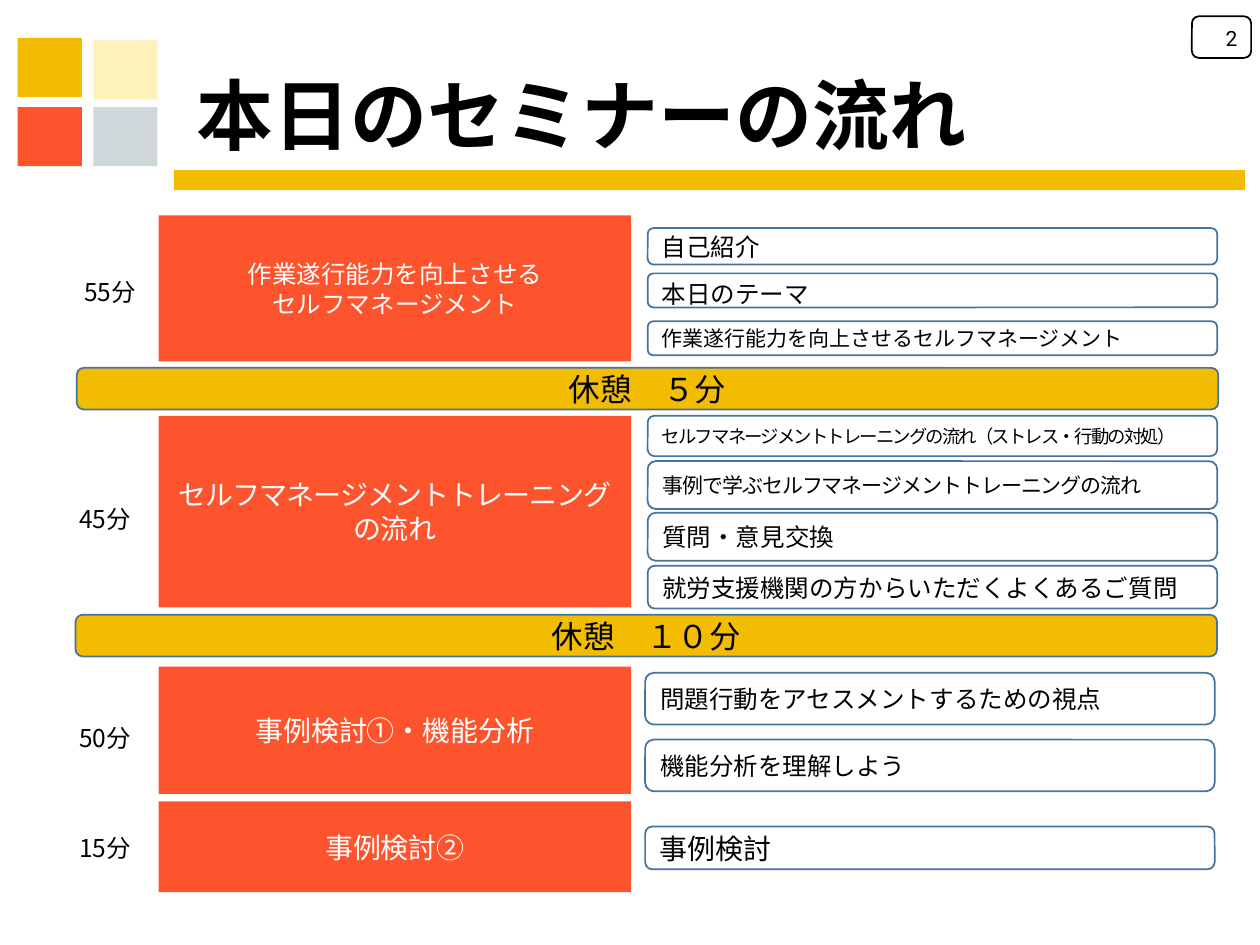
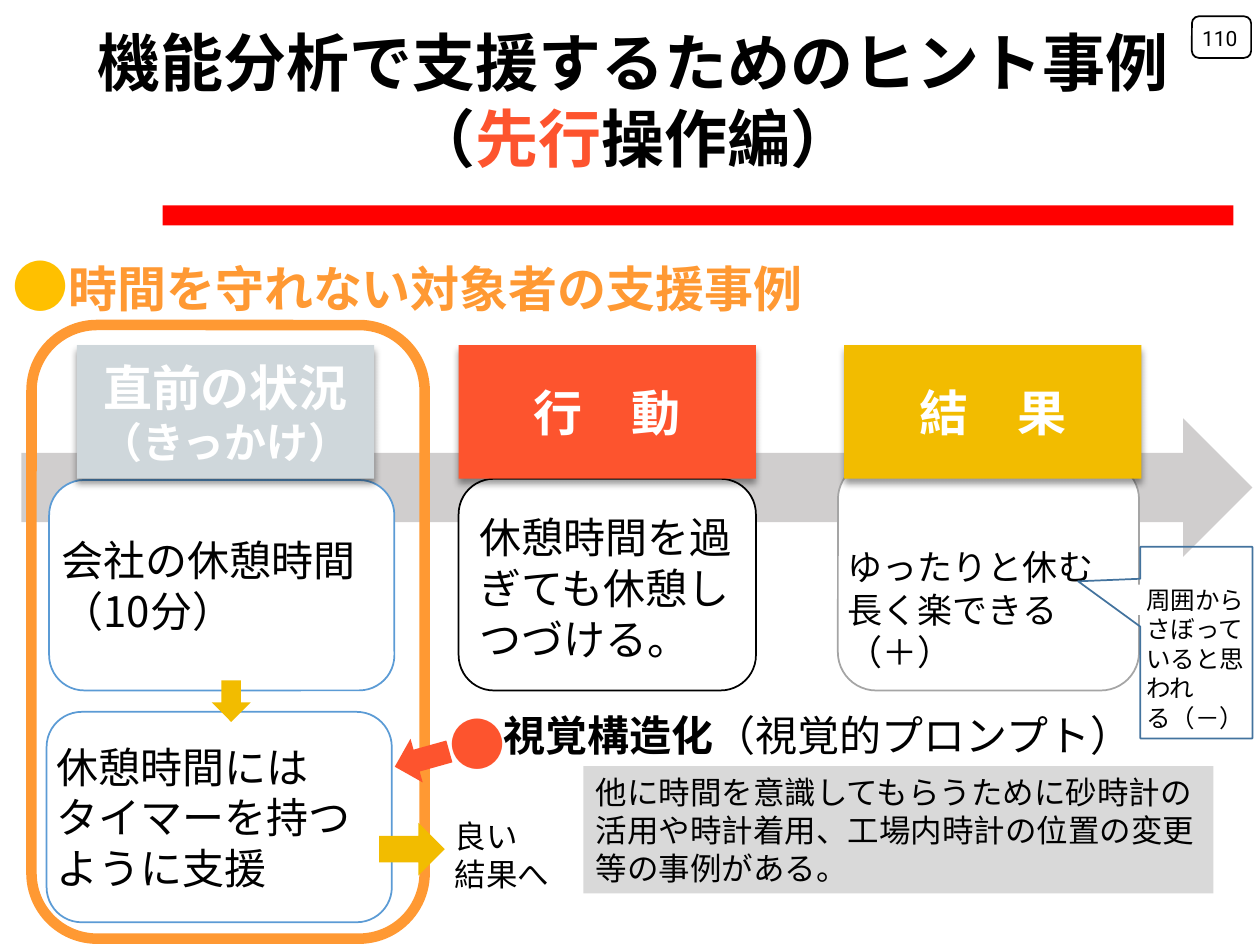
from dataclasses import dataclass
from typing import NamedTuple, Optional

from lxml import etree
from pptx import Presentation
from pptx import util as u
from pptx.dml.color import RGBColor
from pptx.enum import shapes, text
from pptx.oxml.ns import qn

PX = 9144  # EMU in one px, 100 px to the inch
Area = tuple[int, int, int, int]
Kind = shapes.MSO_SHAPE
LEFT, CENTER, RIGHT = text.PP_ALIGN.LEFT, text.PP_ALIGN.CENTER, text.PP_ALIGN.RIGHT


@dataclass(frozen=True)
class Theme:
    font: str = "Noto Sans CJK JP"
    number_font: str = "Roboto"
    leading: float = 1.21
    black: str = "000000"
    white: str = "FFFFFF"
    gold: str = "F2BC00"
    cream: str = "FFF1BA"
    coral: str = "FD542E"
    mist: str = "CFD7DB"
    red: str = "FF0000"
    orange: str = "FF9933"
    amber: str = "FFC000"
    navy: str = "43739E"
    blue: str = "5B9BD5"
    gray: str = "A5A5A5"
    arrow_gray: str = "D0CECE"
    note_gray: str = "D9D9D9"
    title: int = 44
    long_title: int = 36
    bullet: int = 32
    heading: int = 28
    body: int = 24
    result: int = 20
    label: int = 18
    session: int = 16
    topic: int = 14
    small: int = 12
    tiny: float = 10.5


T = Theme()


class Run(NamedTuple):
    words: str
    size: float
    color: str = T.black
    bold: bool = False
    spacing: float = 0
    font: str = T.font


Paragraphs = list[list[Run]]


class Topic(NamedTuple):
    top: int
    height: int
    runs: list[Run]
    left: int = 514


class Session(NamedTuple):
    minutes: str
    minutes_at: tuple[int, int]
    top: int
    height: int
    name: Paragraphs
    topics: list[Topic]


class Rest(NamedTuple):
    left: int
    top: int
    words: str


class Stage(NamedTuple):
    """One step of the antecedent, behaviour, consequence chain."""
    left: int
    color: str
    name: Paragraphs
    frame: Area
    frame_line: str


def lines(*words: str, size: float, color: str = T.black) -> Paragraphs:
    return [[Run(line, size, color)] for line in words]


def fill_text(frame, paragraphs: Paragraphs, align, middle: bool, wrap: bool) -> None:
    frame.word_wrap = wrap
    frame.vertical_anchor = text.MSO_ANCHOR.MIDDLE if middle else text.MSO_ANCHOR.TOP
    for index, runs in enumerate(paragraphs):
        paragraph = frame.add_paragraph() if index else frame.paragraphs[0]
        paragraph.alignment = align
        paragraph.line_spacing = u.Pt(round(T.leading * max(run.size for run in runs), 1))
        for style in runs:
            run = paragraph.add_run()
            run.text = style.words
            run.font.size = u.Pt(style.size)
            run.font.bold = style.bold
            run.font.color.rgb = RGBColor.from_string(style.color)
            run.font.name = style.font
            properties = run._r.get_or_add_rPr()
            etree.SubElement(properties, qn("a:ea"), typeface=style.font)
            if style.spacing:
                properties.set("spc", str(int(style.spacing * 100)))


def write(slide, at: Area, paragraphs: Paragraphs, align=LEFT,
          middle: bool = False, wrap: bool = True) -> None:
    box = slide.shapes.add_textbox(*(side * PX for side in at))
    fill_text(box.text_frame, paragraphs, align, middle, wrap)


def draw(slide, kind, at: Area, fill: Optional[str] = None, line: Optional[str] = None,
         weight: float = 1, paragraphs: Optional[Paragraphs] = None,
         align=CENTER, middle: bool = True):
    shape = slide.shapes.add_shape(kind, *(side * PX for side in at))
    shape.shadow.inherit = False
    if fill:
        shape.fill.solid()
        shape.fill.fore_color.rgb = RGBColor.from_string(fill)
    else:
        shape.fill.background()
    if line:
        shape.line.color.rgb = RGBColor.from_string(line)
        shape.line.width = u.Pt(weight)
    else:
        shape.line.fill.background()
    if paragraphs:
        fill_text(shape.text_frame, paragraphs, align, middle, True)
    return shape


def cast_shadow(shape) -> None:
    effects = shape._element.spPr.find(qn("a:effectLst"))
    shadow = etree.SubElement(effects, qn("a:outerShdw"), blurRad=str(u.Pt(4)),
                              dist=str(u.Pt(3)), dir="5400000", rotWithShape="0")
    color = etree.SubElement(shadow, qn("a:srgbClr"), val=T.black)
    etree.SubElement(color, qn("a:alpha"), val="40000")


def draw_title_rule(slide, left: int, top: int, color: str) -> None:
    draw(slide, Kind.RECTANGLE, (left, top, 850, 16), color)


def draw_page_number(slide, number: str) -> None:
    draw(slide, Kind.ROUNDED_RECTANGLE, (946, 13, 47, 33), T.white, T.black)
    write(slide, (935, 10, 57, 40), [[Run(number, T.small, font=T.number_font)]], RIGHT, True)


def draw_session(slide, session: Session) -> None:
    draw(slide, Kind.RECTANGLE, (126, session.top, 375, session.height), T.coral,
         paragraphs=session.name)
    write(slide, (*session.minutes_at, 132, 34), lines(session.minutes, size=T.topic))
    for topic in session.topics:
        draw(slide, Kind.ROUNDED_RECTANGLE, (topic.left, topic.top, 452, topic.height),
             line=T.navy, paragraphs=[topic.runs], align=LEFT)


SESSIONS = [
    Session("55分", (57, 215), 171, 116,
            lines("作業遂行能力を向上させる", "セルフマネージメント", size=T.topic, color=T.white), [
                Topic(181, 29, [Run("自己紹介", T.topic)]),
                Topic(217, 27, [Run("本日のテーマ", T.topic), Run("　", T.label, T.white)]),
                Topic(255, 27, [Run("作業遂行能力を向上させるセルフマネージメント　", T.small)]),
            ]),
    Session("45分", (53, 395), 330, 152,
            [[Run("セルフマネージメントトレーニング", T.session, T.white, spacing=-0.5),
              Run("の流れ", T.session, T.white)]], [
                Topic(330, 32, [Run("セルフマネージメントトレーニングの流れ（ストレス・行動の対処）",
                                    T.tiny, spacing=-1)]),
                Topic(366, 38, [Run("事例で学ぶセルフマネージメントトレーニングの流れ",
                                    T.small, spacing=-0.6)]),
                Topic(407, 38, [Run("質問・意見交換", T.topic)]),
                Topic(449, 34, [Run("就労支援機関の方からいただくよくあるご質問", T.topic)]),
            ]),
    Session("50分", (53, 569), 529, 101,
            lines("事例検討①・機能分析", size=T.session, color=T.white), [
                Topic(534, 41, [Run("問題行動をアセスメントするための視点", T.topic)], 512),
                Topic(587, 41, [Run("機能分析を理解しよう", T.topic)], 512),
            ]),
    Session("15分", (53, 656), 636, 72,
            lines("事例検討②", size=T.session, color=T.white), [
                Topic(656, 34, [Run("事例検討", T.session)], 512),
            ]),
]
RESTS = [Rest(61, 292, "休憩　５分"), Rest(60, 488, "休憩　１０分")]
EMBLEM = [(14, 30, T.gold), (14, 85, T.coral), (74, 85, T.mist), (74, 32, T.cream)]

STAGES = [
    Stage(61, T.mist, [[Run("直前の状況", T.heading, T.white, True)],
                       [Run("（きっかけ）", T.body, T.white, True)]],
          (39, 381, 274, 167), T.blue),
    Stage(364, T.coral, [[Run("行　動", T.heading, T.white, True)]],
          (364, 380, 236, 168), T.black),
    Stage(670, T.gold, [[Run("結　果", T.heading, T.white, True)]],
          (665, 366, 239, 182), T.gray),
]


def build_agenda(slide) -> None:
    write(slide, (146, 48, 842, 84), [[Run("本日のセミナーの流れ", T.title, bold=True)]])
    draw_title_rule(slide, 138, 135, T.gold)
    for left, top, color in EMBLEM:
        draw(slide, Kind.RECTANGLE, (left, top, 51, 47), color)
    for session in SESSIONS:
        draw_session(slide, session)
    for rest in RESTS:
        draw(slide, Kind.ROUNDED_RECTANGLE, (rest.left, rest.top, 906, 33), T.gold, T.navy,
             paragraphs=lines(rest.words, size=T.label))
    draw_page_number(slide, "2")


def build_stages(slide) -> None:
    draw(slide, Kind.RIGHT_ARROW, (17, 332, 977, 110), T.arrow_gray)
    for stage in STAGES:
        draw(slide, Kind.ROUNDED_RECTANGLE, stage.frame, T.white, stage.frame_line)
    write(slide, (39, 419, 274, 91), lines("会社の休憩時間（10分）", size=T.body))
    write(slide, (371, 401, 220, 131), lines("休憩時間を過ぎても休憩しつづける。", size=T.body))
    write(slide, (900, 459, 100, 128),
          lines("周囲からさぼっていると思われ", "る（－）", size=T.topic))
    for stage in STAGES:
        cast_shadow(draw(slide, Kind.RECTANGLE, (stage.left, 274, 236, 106), stage.color,
                         paragraphs=stage.name))


def build_support(slide) -> None:
    draw(slide, Kind.ROUNDED_RECTANGLE, (37, 565, 274, 167), T.white, T.blue)
    write(slide, (0, 194, 964, 64), [[
        Run("●", T.bullet, T.amber),
        Run("時間を守れない対象者の支援事例", T.heading, T.orange, True)]])
    write(slide, (35, 583, 274, 131),
          lines("休憩時間には", "タイマーを持つように支援", size=T.body))
    write(slide, (390, 558, 535, 50), [[
        Run("視覚構造化", T.body, bold=True), Run("（視覚的プロンプト）", T.body)]])
    draw(slide, Kind.RECTANGLE, (463, 608, 500, 101), T.note_gray, align=LEFT, middle=False,
         paragraphs=lines("他に時間を意識してもらうために砂時計の活用や時計着用、"
                          "工場内時計の位置の変更等の事例がある。", size=T.label))
    draw(slide, Kind.ROUNDED_RECTANGLE, (25, 258, 312, 487), line=T.orange, weight=6)
    prompt_arrow = draw(slide, Kind.DOWN_ARROW, (317, 580, 36, 45), T.coral)
    prompt_arrow.rotation = 74.4
    write(slide, (347, 558, 65, 64), lines("●", size=T.bullet, color=T.coral), wrap=False)
    draw(slide, Kind.DOWN_ARROW, (168, 540, 31, 33), T.gold)
    write(slide, (351, 643, 106, 71), lines("良い", "結果へ", size=T.label))
    draw(slide, Kind.RIGHT_ARROW, (301, 653, 52, 42), T.gold)


def build_hint(slide) -> None:
    write(slide, (25, 13, 955, 131), [[
        Run("機能分析で支援するためのヒント事例（", T.long_title, bold=True),
        Run("先行", T.long_title, T.coral, True),
        Run("操作編）", T.long_title, bold=True)]], CENTER)
    draw_title_rule(slide, 129, 163, T.red)
    build_stages(slide)
    build_support(slide)
    write(slide, (663, 428, 236, 111),
          lines("ゆったりと休む", "長く楽できる（＋）", size=T.result))
    side_effect = draw(slide, Kind.RECTANGULAR_CALLOUT, (905, 434, 89, 152), line=T.navy)
    side_effect.adjustments[0] = -1.055
    side_effect.adjustments[1] = -0.32
    draw(slide, Kind.RECTANGLE, (894, 464, 12, 24), T.white)
    draw_page_number(slide, "110")


def main() -> None:
    deck = Presentation()
    deck.slide_width, deck.slide_height = 1000 * PX, 750 * PX
    for build in (build_agenda, build_hint):
        build(deck.slides.add_slide(deck.slide_layouts[6]))
    deck.save("out.pptx")


if __name__ == "__main__":
    main()
